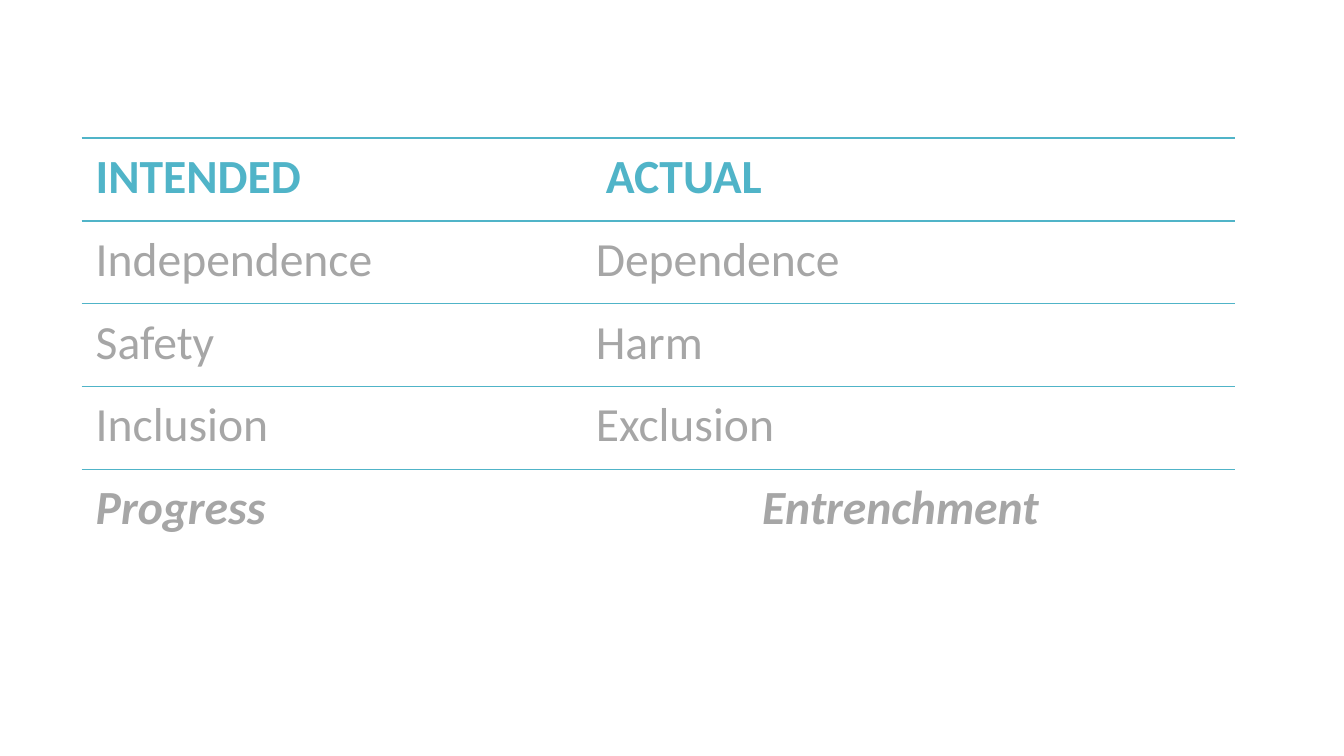
from dataclasses import dataclass

from lxml import etree
from pptx import Presentation
from pptx.dml.color import RGBColor
from pptx.enum.shapes import MSO_CONNECTOR
from pptx.enum.text import MSO_ANCHOR
from pptx.oxml.ns import qn
from pptx.util import Inches, Pt

STRAIGHT = MSO_CONNECTOR.STRAIGHT
TOP = MSO_ANCHOR.TOP
COLORS = {"teal": "50B4C8", "gray": "A6A6A6"}

LIST_LEFT, LIST_TOP = 0.81, 1.37
LIST_WIDTH, LIST_HEIGHT = 11.44, 4.11
INSET = 0.14


@dataclass
class Row:
    intended: str
    actual: str
    color: str = "gray"
    bold: bool = False
    italic: bool = False
    tab: float = 4.96


ROWS = [
    Row("INTENDED", "ACTUAL", color="teal", bold=True, tab=5.06),
    Row("Independence", "Dependence"),
    Row("Safety", "Harm"),
    Row("Inclusion", "Exclusion"),
    Row("Progress", "Entrenchment", bold=True, italic=True, tab=6.61),
]


def add_rule(page, top: float) -> None:
    """Draw the thin line above a row."""
    rule = page.shapes.add_connector(
        STRAIGHT, Inches(LIST_LEFT), Inches(top),
        Inches(LIST_LEFT + LIST_WIDTH), Inches(top))
    rule.line.color.rgb = RGBColor.from_string(COLORS["teal"])
    rule.line.width = Pt(1)
    etree.SubElement(rule.element.spPr, qn("a:effectLst"))


def add_row(page, row: Row, top: float, height: float) -> None:
    """Write both words of a row, the second at a tab stop."""
    box = page.shapes.add_textbox(
        Inches(LIST_LEFT), Inches(top), Inches(LIST_WIDTH), Inches(height))
    frame = box.text_frame
    frame.word_wrap = True
    frame.vertical_anchor = TOP
    frame.margin_left = frame.margin_right = Inches(INSET)
    frame.margin_top = frame.margin_bottom = Inches(INSET)

    para = frame.paragraphs[0]
    para.text = f"{row.intended}\t{row.actual}"
    para.line_spacing = 0.9
    font = para.font
    font.name = "Calibri"
    font.size = Pt(34)
    font.bold = row.bold
    font.italic = row.italic
    font.color.rgb = RGBColor.from_string(COLORS[row.color])

    # Tab stops precede the default run properties
    properties = para._p.get_or_add_pPr()
    tabs = etree.Element(qn("a:tabLst"))
    etree.SubElement(tabs, qn("a:tab"), pos=str(Inches(row.tab)), algn="l")
    properties.find(qn("a:defRPr")).addprevious(tabs)


def main() -> None:
    deck = Presentation()
    deck.slide_width, deck.slide_height = Inches(13.33), Inches(7.5)
    page = deck.slides.add_slide(deck.slide_layouts[6])

    # Ruled rows of equal height
    row_height = LIST_HEIGHT / len(ROWS)
    for index, row in enumerate(ROWS):
        top = LIST_TOP + index * row_height
        add_rule(page, top)
        add_row(page, row, top, row_height)

    deck.save("out.pptx")


if __name__ == "__main__":
    main()
